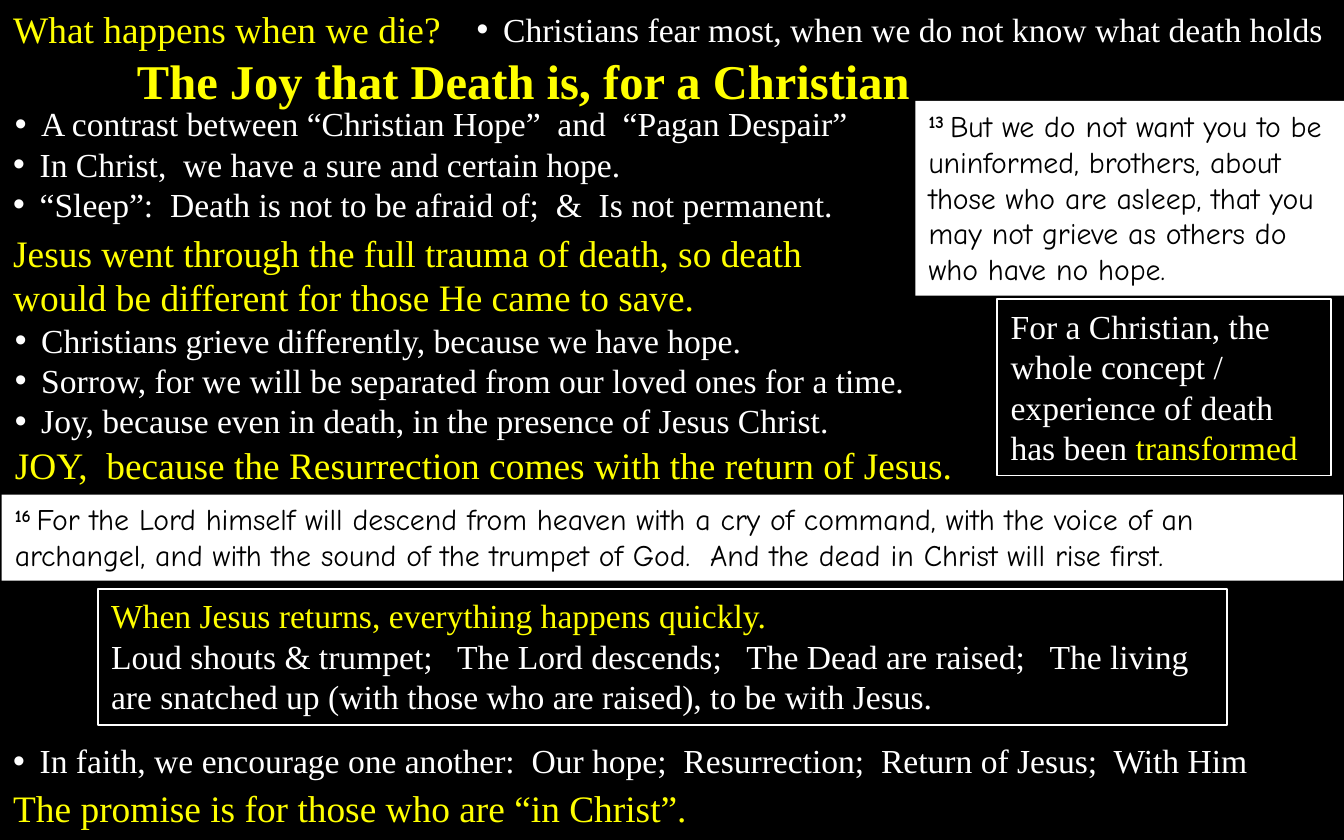
from lxml import etree
from pptx import Presentation
from pptx.dml.color import RGBColor
from pptx.enum.shapes import MSO_SHAPE
from pptx.enum.text import MSO_ANCHOR, MSO_AUTO_SIZE, PP_ALIGN
from pptx.oxml.ns import qn
from pptx.util import Cm, Pt

YELLOW, WHITE, BLACK = "FFFF00", "FFFFFF", "000000"
SERIF, HAND = "Times New Roman", "Comic Neue"


def rgb(value):
    return RGBColor.from_string(value)


def write(shape, lines, size, color, font=SERIF, bullet=False, align=PP_ALIGN.LEFT):
    """Fill a shape with one paragraph per line."""
    frame = shape.text_frame
    frame.word_wrap = True
    frame.auto_size = MSO_AUTO_SIZE.SHAPE_TO_FIT_TEXT
    frame.vertical_anchor = MSO_ANCHOR.TOP
    for i, line in enumerate(lines):
        paragraph = frame.add_paragraph() if i else frame.paragraphs[0]
        paragraph.alignment = align
        if bullet:
            props = paragraph._p.get_or_add_pPr()
            props.set("marL", str(Cm(0.5)))
            props.set("indent", str(-Cm(0.5)))
            etree.SubElement(props, qn("a:buFont")).set("typeface", "Arial")
            etree.SubElement(props, qn("a:buChar")).set("char", "•")
        paragraph.font.name = font
        paragraph.font.size = Pt(size)
        paragraph.font.color.rgb = rgb(color)
        paragraph.add_run().text = line
    return frame.paragraphs


prs = Presentation()
prs.slide_width, prs.slide_height = Cm(25.4), Cm(15.88)
slide = prs.slides.add_slide(prs.slide_layouts[6])
slide.background.fill.solid()
slide.background.fill.fore_color.rgb = rgb(BLACK)

# Title
title = slide.shapes.add_textbox(Cm(0.1), Cm(0.84), Cm(19.61), Cm(1.37))
heading = write(title, ["The Joy that Death is, for a Christian"], 26, YELLOW,
                align=PP_ALIGN.CENTER)
heading[0].font.bold = True

# Yellow statements
statements = [
    (0, 0, 9.55, 1.12, "What happens when we die?"),
    (0, 4.22, 16.23, 1.96, "Jesus went through the full trauma of death, so death "
                           "would be different for those He came to save."),
    (0.03, 8.23, 25.37, 1.12,
     "JOY,  because the Resurrection comes with the return of Jesus."),
    (0, 14.71, 25.37, 1.12, "The promise is for those who are “in Christ”."),
]
for left, top, width, height, statement in statements:
    box = slide.shapes.add_textbox(Cm(left), Cm(top), Cm(width), Cm(height))
    write(box, [statement], 20, YELLOW)

# White bullet points
points = [
    (8.76, 0.05, 16.64, 1.02,
     ["Christians fear most, when we do not know what death holds"]),
    (0.03, 1.83, 16.64, 1.02,
     ["A contrast between “Christian Hope”  and  “Pagan Despair”"]),
    (0, 2.59, 16.23, 1.8,
     ["In Christ,  we have a sure and certain hope.",
      "“Sleep”:  Death is not to be afraid of;  &  Is not permanent."]),
    (0.03, 5.92, 25.37, 2.57,
     ["Christians grieve differently, because we have hope.",
      "Sorrow, for we will be separated from our loved ones for a time.",
      "Joy, because even in death, in the presence of Jesus Christ."]),
    (0, 13.87, 25.35, 1.02,
     ["In faith, we encourage one another:  Our hope;  Resurrection;  "
      "Return of Jesus;  With Him"]),
]
for left, top, width, height, lines in points:
    box = slide.shapes.add_textbox(Cm(left), Cm(top), Cm(width), Cm(height))
    write(box, lines, 18, WHITE, bullet=True)

# Bible verses on white, with raised verse numbers
verses = [
    (17.3, 1.91, 8.1, 3.68, "13 ",
     "But we do not want you to be uninformed, brothers, about those who are "
     "asleep, that you may not grieve as others do who have no hope."),
    (0.03, 9.35, 25.35, 1.63, "16 ",
     "For the Lord himself will descend from heaven with a cry of command, with "
     "the voice of an archangel, and with the sound of the trumpet of God.  "
     "And the dead in Christ will rise first."),
]
for left, top, width, height, number, verse in verses:
    panel = slide.shapes.add_shape(MSO_SHAPE.RECTANGLE, Cm(left), Cm(top),
                                   Cm(width), Cm(height))
    panel.shadow.inherit = False
    panel.fill.solid()
    panel.fill.fore_color.rgb = rgb(WHITE)
    panel.line.fill.background()
    paragraph = write(panel, [number], 16, BLACK, font=HAND)[0]
    verse_number = paragraph.runs[0]
    verse_number.font.bold = True
    verse_number._r.get_or_add_rPr().set("baseline", "30000")
    paragraph.add_run().text = verse

# Outlined remarks
remarks = [
    (1.85, 11.13, 21.34, 2.57,
     ["When Jesus returns, everything happens quickly.",
      "Loud shouts & trumpet;   The Lord descends;   The Dead are raised;   "
      "The living are snatched up (with those who are raised), to be with Jesus."]),
    (18.85, 5.66, 6.3, 3.33,
     ["For a Christian, the whole concept / experience of death has been"]),
]
written = []
for left, top, width, height, lines in remarks:
    frame = slide.shapes.add_shape(MSO_SHAPE.RECTANGLE, Cm(left), Cm(top),
                                   Cm(width), Cm(height))
    frame.shadow.inherit = False
    frame.fill.background()
    frame.line.color.rgb = rgb(WHITE)
    frame.line.width = Pt(1)
    written.append(write(frame, lines, 18, WHITE))

# Yellow emphasis within the remarks
return_remark, concept_remark = written
return_remark[0].font.color.rgb = rgb(YELLOW)
transformed = concept_remark[0].add_run()
transformed.text = " transformed"
transformed.font.color.rgb = rgb(YELLOW)

prs.save("out.pptx")
